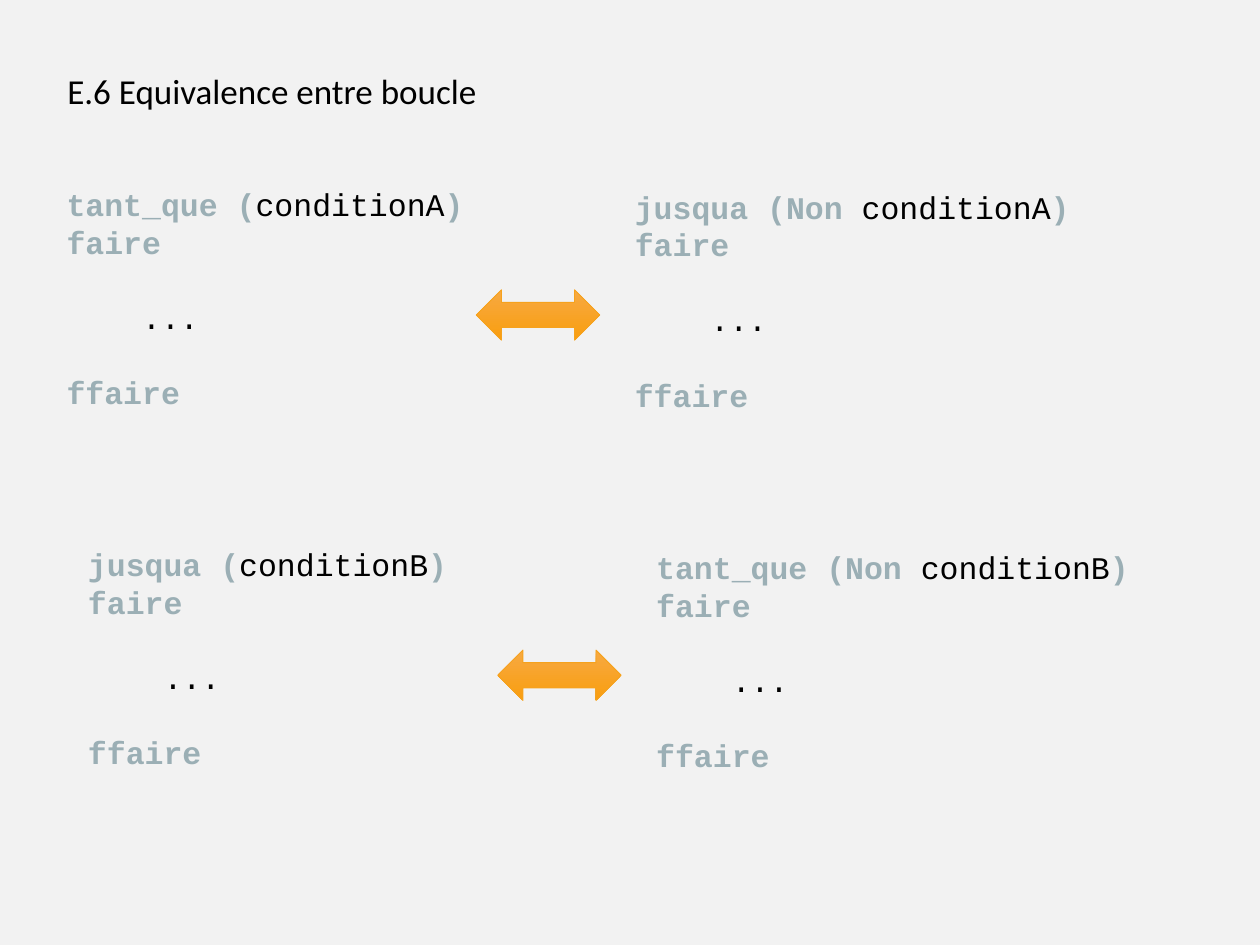
from dataclasses import dataclass

from pptx import Presentation
from pptx.dml.color import RGBColor as RGB
from pptx.enum.shapes import MSO_SHAPE as Shape
from pptx.enum.text import PP_ALIGN as Align
from pptx.util import Inches, Pt


@dataclass(frozen=True)
class Theme:
    background: RGB = RGB(0xF2, 0xF2, 0xF2)
    ink: RGB = RGB(0x00, 0x00, 0x00)
    keyword: RGB = RGB(0x9B, 0xAF, 0xB5)
    arrow_top: RGB = RGB(0xF7, 0xA9, 0x42)
    arrow_bottom: RGB = RGB(0xF9, 0x9E, 0x0F)
    arrow_edge: RGB = RGB(0xF6, 0xA2, 0x1D)
    title_font: str = "Calibri"
    code_font: str = "Courier New"
    title_size: float = 20
    code_size: float = 18
    code_leading: float = 21.5


THEME = Theme()
CHAR = 0.15  # advance of one code character, inches
INSET = 0.22  # left and right text margins together, inches


def style_run(run, font, size, color, bold=False):
    run.font.name = font
    run.font.size = Pt(size)
    run.font.color.rgb = color
    run.font.bold = bold


def add_title(slide, title, left, top, width, height):
    box = slide.shapes.add_textbox(*map(Inches, (left, top, width, height)))
    box.text_frame.word_wrap = False
    heading = box.text_frame.paragraphs[0]
    heading.text = title
    heading.alignment = Align.CENTER
    style_run(heading.runs[0], THEME.title_font, THEME.title_size, THEME.ink)


def add_loop(group, opening, condition, left, top, height):
    """Loop in pseudocode; its width follows from its first line."""
    width = len(opening + condition + ")") * CHAR + INSET
    box = group.shapes.add_textbox(*map(Inches, (left, top, width, height)))
    frame = box.text_frame
    frame.word_wrap = False
    frame.margin_top = Inches(0.08)

    # Each line: its (text, is keyword) parts, and whether a gap precedes it
    lines = [
        ([(opening, True), (condition, False), (")", True)], False),
        ([("faire", True)], False),
        ([("...", False)], True),
        ([("ffaire", True)], True),
    ]
    for index, (parts, gap) in enumerate(lines):
        line = frame.add_paragraph() if index else frame.paragraphs[0]
        line.line_spacing = Pt(THEME.code_leading)
        if gap:
            line.space_before = Pt(THEME.code_leading)
        for words, is_keyword in parts:
            run = line.add_run()
            run.text = words
            color = THEME.keyword if is_keyword else THEME.ink
            style_run(run, THEME.code_font, THEME.code_size, color, is_keyword)

    # Loop body, indented by four characters
    body = frame.paragraphs[2]
    body._p.get_or_add_pPr().set("marL", str(Inches(4 * CHAR)))


def add_arrow(group, left, top, width, height):
    arrow = group.shapes.add_shape(
        Shape.LEFT_RIGHT_ARROW, *map(Inches, (left, top, width, height)))
    arrow.shadow.inherit = False
    arrow.fill.gradient()
    arrow.fill.gradient_angle = 270
    shades = (THEME.arrow_top, THEME.arrow_bottom)
    for stop, position, shade in zip(arrow.fill.gradient_stops, (0, 1), shades):
        stop.position = position
        stop.color.rgb = shade
    arrow.line.color.rgb = THEME.arrow_edge
    arrow.line.width = Pt(0.5)


def add_equivalence(slide, first, second, condition, left, top, height):
    """Two equivalent loops with a double arrow between them."""
    group = slide.shapes.add_group_shape()
    add_loop(group, first, condition, left, top, height)
    add_loop(group, second, condition, left + 4.51, top + 0.02, height)
    add_arrow(group, left + 3.35, top + 0.91, 0.98, 0.4)


def main():
    deck = Presentation()
    deck.slide_width, deck.slide_height = Inches(10), Inches(7.5)
    slide = deck.slides.add_slide(deck.slide_layouts[6])
    slide.background.fill.solid()
    slide.background.fill.fore_color.rgb = THEME.background

    add_title(slide, "E.6 Equivalence entre boucle", 0.43, 0.5, 3.46, 0.44)
    add_equivalence(slide, "tant_que (", "jusqua (Non ", "conditionA",
                    0.43, 1.39, 1.92)
    add_equivalence(slide, "jusqua (", "tant_que (Non ", "conditionB",
                    0.6, 4.25, 1.92)
    deck.save("out.pptx")


if __name__ == "__main__":
    main()
